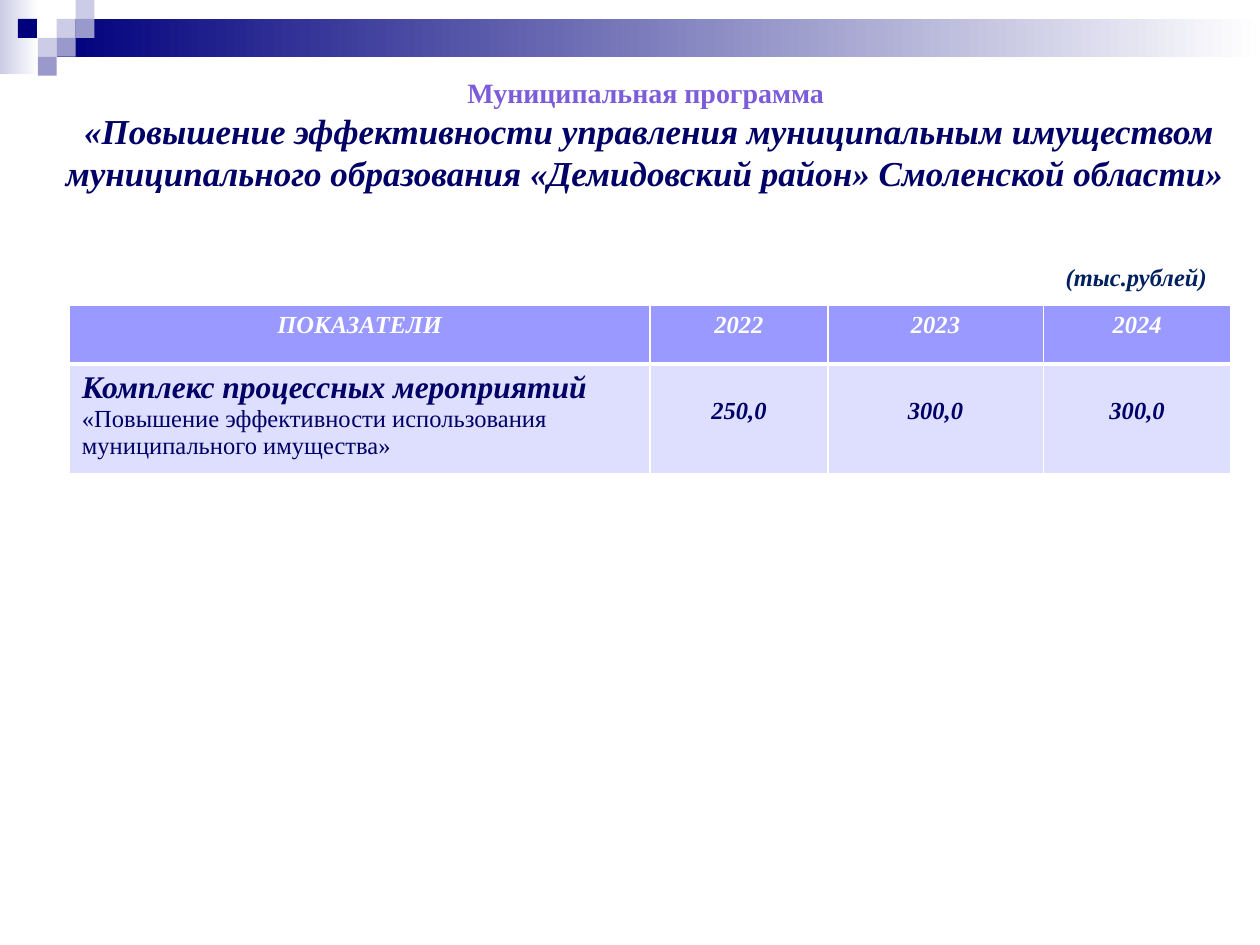
import pptx
import pptx.util
import pptx.dml.color
import pptx.enum.shapes
import pptx.enum.text
import pptx.oxml
import pptx.oxml.ns

CENTER = pptx.enum.text.PP_ALIGN.CENTER
LEFT = pptx.enum.text.PP_ALIGN.LEFT
NAVY, INK, LILAC, LAVENDER = "00007D", "000066", "9999CC", "CCCCE6"


def color(code):
    return pptx.dml.color.RGBColor.from_string(code)


class SlideBuilder:
    font = "Times New Roman"
    unit = 0.15

    def __init__(self, deck):
        self.page = deck.slides.add_slide(deck.slide_layouts[6])

    def grid(self, *steps):
        return [pptx.util.Inches(step * self.unit) for step in steps]

    def style(self, font, size, code, bold=True, italic=True):
        font.name = self.font
        font.size = pptx.util.Pt(size)
        font.bold, font.italic = bold, italic
        font.color.rgb = color(code)

    def block(self, place, *codes):
        box = self.page.shapes.add_shape(
            pptx.enum.shapes.MSO_SHAPE.RECTANGLE, *self.grid(*place))
        box.shadow.inherit = False
        box.line.fill.background()
        if len(codes) == 1:
            box.fill.solid()
            box.fill.fore_color.rgb = color(codes[0])
            return
        box.fill.gradient()
        box.fill.gradient_angle = 0
        for position, (stop, code) in enumerate(zip(box.fill.gradient_stops, codes)):
            stop.position = position
            stop.color.rgb = color(code)

    def text(self, place, lines, align=CENTER, wrap=True):
        frame = self.page.shapes.add_textbox(*self.grid(*place)).text_frame
        frame.word_wrap = wrap
        for index, (words, *look) in enumerate(lines):
            para = frame.add_paragraph() if index else frame.paragraphs[0]
            para.text = words
            para.alignment = align
            self.style(para.font, *look)

    def table(self, place, columns, rows):
        table = self.page.shapes.add_table(len(rows), len(columns), *self.grid(*place)).table
        for column, width in zip(table.columns, columns):
            column.width = pptx.util.Inches(width)
        for row, height in zip(table.rows, rows):
            row.height = pptx.util.Inches(height)
        return table

    def cell(self, cell, spans, fill, align=CENTER, thick="B", top=0.05):
        cell.fill.solid()
        cell.fill.fore_color.rgb = color(fill)
        cell.margin_top = pptx.util.Inches(top)
        para = cell.text_frame.paragraphs[0]
        para.alignment = align
        for words, *look in spans:
            span = para.add_run()
            span.text = words
            self.style(span.font, *look)
        properties = cell._tc.get_or_add_tcPr()
        for index, side in enumerate("LRTB"):
            width = pptx.util.Pt(3 if side == thick else 1)
            properties.insert(index, pptx.oxml.parse_xml(
                f'<a:ln{side} {pptx.oxml.ns.nsdecls("a")} w="{width}"><a:solidFill>'
                f'<a:srgbClr val="FFFFFF"/></a:solidFill></a:ln{side}>'))


def main():
    deck = pptx.Presentation()
    deck.slide_width = pptx.util.Inches(10)
    deck.slide_height = pptx.util.Inches(7.5)
    slide = SlideBuilder(deck)

    slide.block((0, 0, 2.05, 3.9), LAVENDER, "FFFFFF")
    slide.block((3, 1, 63.67, 2), NAVY, "FFFFFF")
    squares = [(3, 1, LAVENDER), (4, 0, LAVENDER), (4, 1, LILAC), (2, 2, LAVENDER),
               (0.95, 1, NAVY), (3, 2, LILAC), (2, 3, LILAC)]
    for column, row, code in squares:
        slide.block((column, row, 1, 1), code)

    slide.text((2.05, 3.67, 64.6, 9.2), [
        ("Муниципальная программа ", 16, "7D5CDA", True, False),
        ("«Повышение эффективности управления муниципальным имуществом муниципального "
         "образования «Демидовский район» Смоленской области» ", 20, INK)])

    table = slide.table((3.67, 16.13, 61.47, 8.87), [4.61, 1.41, 1.71, 1.49], [0.47, 0.86])
    for column, heading in enumerate(["ПОКАЗАТЕЛИ", "2022", "2023", "2024"]):
        slide.cell(table.cell(0, column), [(heading, 14, "FFFFFF")], "9999FF")
    slide.cell(table.cell(1, 0), [
        ("Комплекс процессных мероприятий ", 18, INK),
        ("«Повышение эффективности использования муниципального имущества»",
         14, INK, False, False)], "DEDEFF", LEFT, "T")
    for column, amount in enumerate(["250,0", "300,0", "300,0"], 1):
        slide.cell(table.cell(1, column), [(amount, 14, INK)], "DEDEFF", thick="T", top=0.27)

    slide.text((55.73, 13.53, 8.87, 2.27), [("(тыс.рублей)", 14, "002060")], LEFT, False)
    deck.save("out.pptx")


if __name__ == "__main__":
    main()
